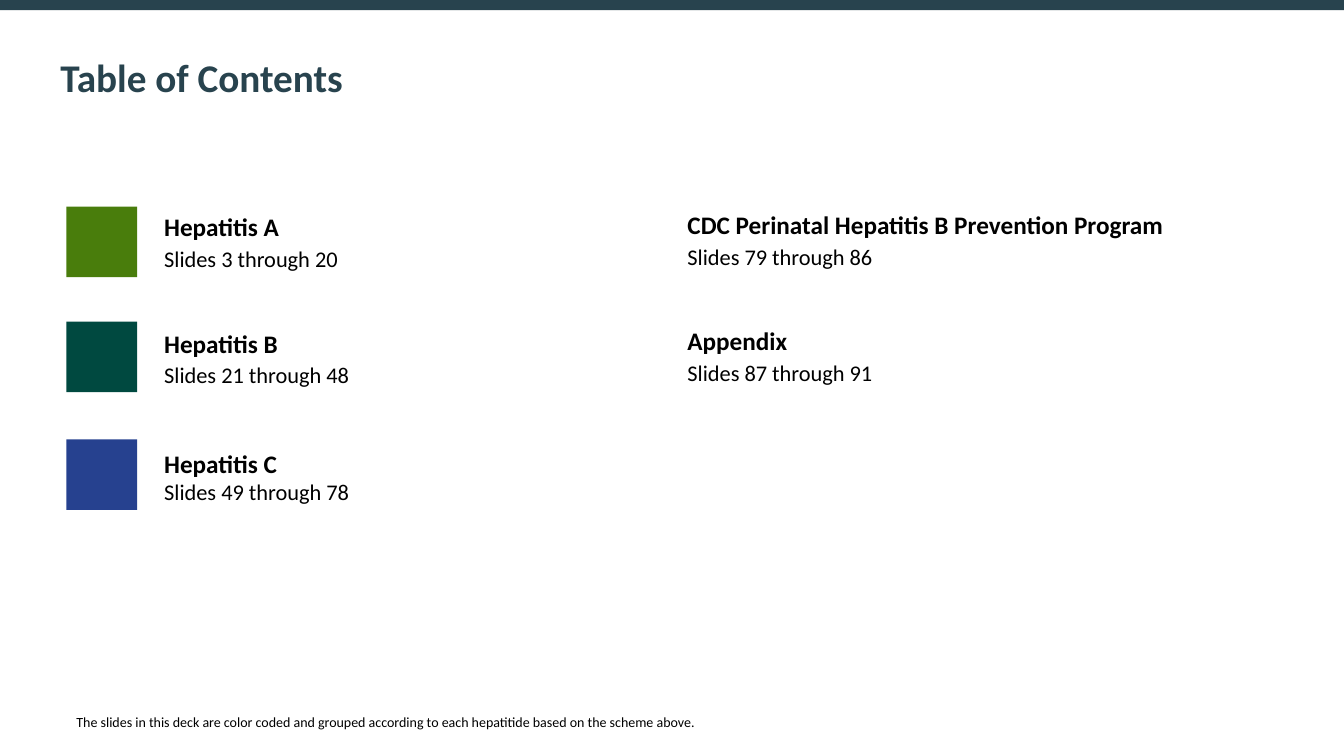
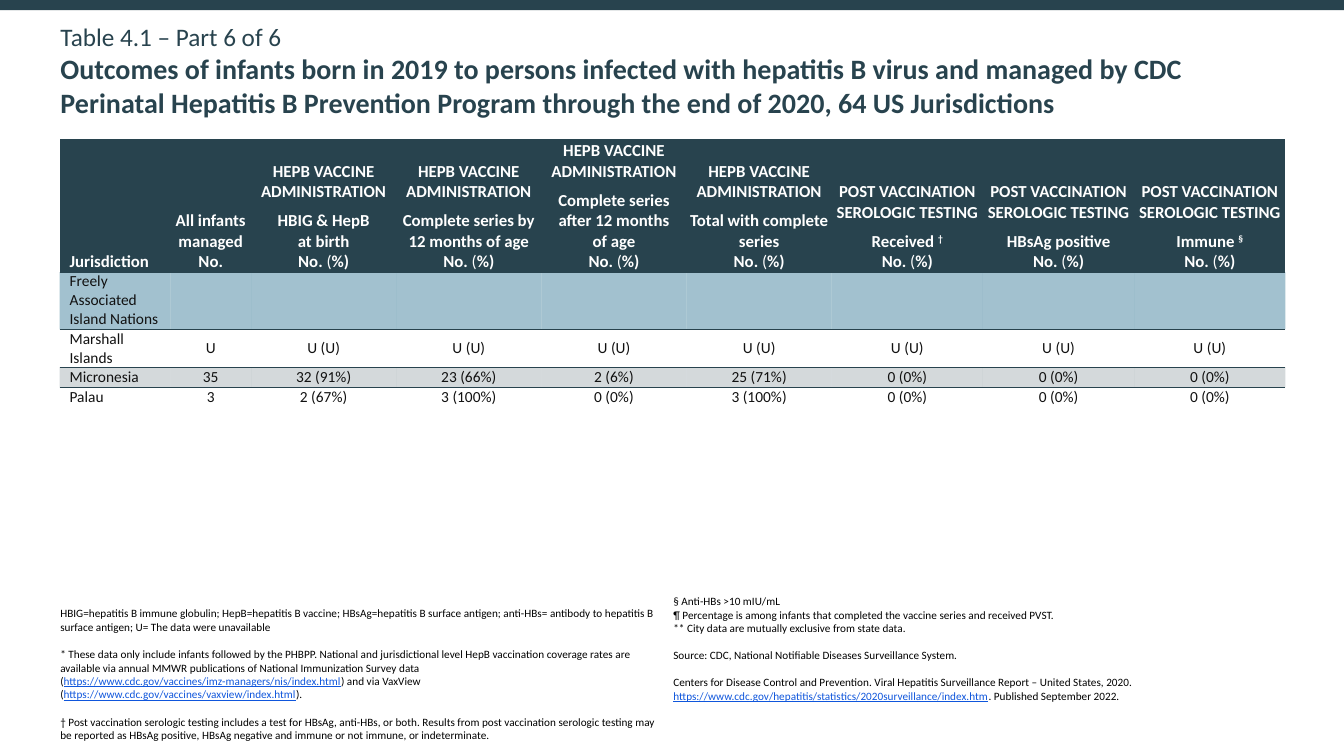
from dataclasses import dataclass
from lxml.etree import SubElement as Sub
from pptx import Presentation
from pptx.dml.color import RGBColor as Rgb
from pptx.enum.shapes import MSO_SHAPE as Form
from pptx.enum.text import MSO_ANCHOR as Anchor, MSO_AUTO_SIZE as Fit, PP_ALIGN as Align
from pptx.oxml.ns import qn
from pptx.util import Inches, Pt


@dataclass(frozen=True)
class Theme:
    font: str = "Calibri"
    # Colours
    navy: str = "28434E"
    steel: str = "6499AF"
    black: str = "000000"
    ink: str = "111111"
    white: str = "FFFFFF"
    link: str = "0F56DC"
    green: str = "497D0C"
    teal: str = "004940"
    blue: str = "26418F"
    # Type sizes
    title: int = 28
    lead: int = 18
    head: int = 20
    name: int = 18
    pages: int = 16
    hint: int = 10
    label: int = 12
    cell: int = 11
    note: int = 8


T = Theme()
BARE = "{2D5ABB26-0587-4C30-8999-92F81FD0307C}"  # table style without grid

# Contents: name, pages, left, name top, pages top
TOPICS = [
    ("Hepatitis A", "Slides 3 through 20", 1.53, 2.05, 2.38),
    ("Hepatitis B", "Slides 21 through 48", 1.53, 3.21, 3.53),
    ("Hepatitis C", "Slides 49 through 78", 1.53, 4.4, 4.69),
    ("CDC Perinatal Hepatitis B Prevention Program", "Slides 79 through 86", 6.72, 2.03, 2.36),
    ("Appendix", "Slides 87 through 91", 6.72, 3.18, 3.51),
]
KEYS = [(2.05, T.green), (3.19, T.teal), (4.36, T.blue)]
HINT = ("The slides in this deck are color coded and grouped according to "
        "each hepatitide based on the scheme above.")

# Outcomes table
WIDTHS = [1.1, 0.8] + [1.44] * 4 + [1.5] * 3
HEIGHTS = [1.32, 0.22, 0.22, 0.2, 0.2]
DOSE = "HEPB VACCINE ADMINISTRATION"
TEST = "POST VACCINATION SEROLOGIC TESTING"
HEADS = [  # group, measure, mark
    (DOSE, "HBIG & HepB\nat birth", ""),
    (DOSE, "Complete series by 12 months of age", ""),
    (DOSE, "Complete series after 12 months\nof age", ""),
    (DOSE, "Total with complete series", ""),
    (TEST, "Received ", "†"),
    (TEST, "HBsAg positive", ""),
    (TEST, "Immune ", "§"),
]
NONE = "0 (0%)"
ROWS = [
    ["Freely\nAssociated\nIsland Nations"] + [""] * 8,
    ["Marshall\nIslands", "U"] + ["U (U)"] * 7,
    ["Micronesia", "35", "32 (91%)", "23 (66%)", "2 (6%)", "25 (71%)"] + [NONE] * 3,
    ["Palau", "3", "2 (67%)", "3 (100%)", NONE, "3 (100%)"] + [NONE] * 3,
]
FILLS = [(T.navy, 100), (T.steel, 60), None, (T.navy, 20), None]

# Notes: space before, pieces of text (web addresses are styled as links)
LEFT = [
    (0, ["HBIG=hepatitis B immune globulin; HepB=hepatitis B vaccine; HBsAg=hepatitis B "
         "surface antigen; anti-HBs= antibody to hepatitis B surface antigen; "
         "U= The data were unavailable"]),
    (10, ["* These data only include infants followed by the PHBPP. National and "
          "jurisdictional level HepB vaccination coverage rates are available via annual "
          "MMWR publications of National Immunization Survey data (",
          "https://www.cdc.gov/vaccines/imz-managers/nis/index.html",
          ") and via VaxView (",
          "https://www.cdc.gov/vaccines/vaxview/index.html", ")."]),
    (10, ["† Post vaccination serologic testing includes a test for HBsAg, anti-HBs, or "
          "both. Results from post vaccination serologic testing may be reported as HBsAg "
          "positive, HBsAg negative and immune or not immune, or indeterminate."]),
]
RIGHT = [
    (0, ["§ Anti-HBs >10 mIU/mL"]),
    (0, ["¶ Percentage is among infants that completed the vaccine series and received PVST."]),
    (0, ["** City data are mutually exclusive from state data."]),
    (9.8, ["Source: CDC, National Notifiable Diseases Surveillance System."]),
    (9.8, ["Centers for Disease Control and Prevention. Viral Hepatitis Surveillance "
           "Report – United States, 2020. ",
           "https://www.cdc.gov/hepatitis/statistics/2020surveillance/index.htm",
           ". Published September 2022."]),
]


def style(font, size, color, bold=False):
    font.name, font.size, font.bold = T.font, Pt(size), bold
    font.color.rgb = Rgb.from_string(color)


def write(para, text, size, color=T.black, bold=False):
    """Add text to a paragraph; a newline becomes a line break."""
    for i, line in enumerate(text.split("\n")):
        if i:
            para.add_line_break()
        run = para.add_run()
        run.text = line
        style(run.font, size, color, bold)
    return run


def place(shape, x, y, w, h):
    shape.left, shape.top, shape.width, shape.height = map(Inches, (x, y, w, h))


def block(slide, x, y, w, h):
    frame = slide.shapes.add_textbox(*map(Inches, (x, y, w, h))).text_frame
    frame.word_wrap = True
    return frame


def rect(slide, x, y, w, h, color):
    shape = slide.shapes.add_shape(Form.RECTANGLE, *map(Inches, (x, y, w, h)))
    shape.shadow.inherit = False
    shape.fill.solid()
    shape.fill.fore_color.rgb = Rgb.from_string(color)
    shape.line.fill.background()
    return shape


def title(slide, box, parts):
    """Fill the title from (text, size, bold) parts."""
    shape = slide.shapes.title
    place(shape, *box)
    frame = shape.text_frame
    frame.word_wrap, frame.auto_size = True, Fit.NONE
    frame.vertical_anchor = Anchor.TOP
    para = frame.paragraphs[0]
    para.alignment = Align.LEFT
    for i, (text, size, bold) in enumerate(parts):
        if i:
            para.add_line_break()
        write(para, text, size, T.navy, bold)


def band(slide):
    """Put the top band on the layout, so that every slide shows it."""
    bar = rect(slide, 0, 0, 13.33, 0.1, T.navy)
    slide.slide_layout.shapes.element.insert(2, bar.element)


def topic(slide, name, pages, x, top, low):
    write(block(slide, x, top, 5.23, 0.4).paragraphs[0], name, T.name, bold=True)
    write(block(slide, x, low, 3.09, 0.37).paragraphs[0], pages, T.pages)


def edge(cell, side):
    line = Sub(cell._tc.get_or_add_tcPr(), qn("a:" + side), w=str(Pt(1)))
    Sub(Sub(line, qn("a:solidFill")), qn("a:srgbClr"), val=T.navy)
    cell._tc.tcPr.insert(0, line)


def paint(cell, fill):
    if not fill:
        cell.fill.background()
        return
    color, alpha = fill
    cell.fill.solid()
    cell.fill.fore_color.rgb = Rgb.from_string(color)
    if alpha < 100:
        tint = cell._tc.tcPr.find(".//" + qn("a:srgbClr"))
        Sub(tint, qn("a:alpha"), val=str(alpha * 1000))


def header(cell, group, name, mark):
    """Write a group, its measure and the unit in one heading cell."""
    frame = cell.text_frame
    top = frame.paragraphs[0]
    write(top, group, T.label, T.white, True)
    top.space_after = Pt(6)
    mid, unit = frame.add_paragraph(), frame.add_paragraph()
    write(mid, name, T.label, T.white, True)
    if mark:
        run = write(mid, mark, T.label, T.white, True)
        run._r.get_or_add_rPr().set("baseline", "30000")
    for text, bold in (("No.", True), (" (", False), ("%)", True)):
        write(unit, text, T.label, T.white, bold)


def grid(slide, x, y):
    size = len(HEIGHTS), len(WIDTHS)
    box = map(Inches, (x, y, sum(WIDTHS), sum(HEIGHTS)))
    table = slide.shapes.add_table(*size, *box).table
    table._tbl.tblPr.find(qn("a:tableStyleId")).text = BARE
    for col, width in zip(table.columns, WIDTHS):
        col.width = Inches(width)
    for row, height in zip(table.rows, HEIGHTS):
        row.height = Inches(height)
    # Text
    write(table.cell(0, 0).text_frame.paragraphs[0], "Jurisdiction", T.label, T.white, True)
    count = table.cell(0, 1).text_frame
    write(count.paragraphs[0], "All infants managed", T.label, T.white, True)
    write(count.add_paragraph(), "No.", T.label, T.white, True)
    for c, head in enumerate(HEADS, 2):
        header(table.cell(0, c), *head)
    for r, row in enumerate(ROWS, 1):
        for c, text in enumerate(row):
            para = table.cell(r, c).text_frame.paragraphs[0]
            if text:
                write(para, text, T.cell, T.ink)
            else:
                para.font.size = Pt(T.cell)
    # Fills, margins and rules
    last = len(ROWS)
    for r, row in enumerate(table.rows):
        for c, cell in enumerate(row.cells):
            paint(cell, FILLS[r])
            cell.vertical_anchor = Anchor.MIDDLE if r else Anchor.BOTTOM
            cell.margin_left = Inches(0.01 if c else 0.1)
            cell.margin_right = Inches(0.01)
            cell.margin_top = Inches(0 if r else 0.01)
            cell.margin_bottom = 0
            for para in cell.text_frame.paragraphs:
                para.alignment = Align.CENTER if c else Align.LEFT
            if r < last:
                edge(cell, "lnB")
            if r:
                edge(cell, "lnT")


def notes(slide, box, items):
    frame = block(slide, *box)
    for i, (gap, parts) in enumerate(items):
        para = frame.add_paragraph() if i else frame.paragraphs[0]
        if gap:
            para.space_before = Pt(gap)
        for text in parts:
            link = text.startswith("https")
            run = write(para, text, T.note, T.link if link else T.black)
            run.font.underline = link


def contents(slide):
    title(slide, (0.5, 0.48, 12.53, 0.68), [("Table of Contents", T.title, True)])
    for item in TOPICS:
        topic(slide, *item)
    for top, color in KEYS:
        rect(slide, 0.66, top, 0.7, 0.7, color)
    write(block(slide, 0.66, 7.03, 8.44, 0.27).paragraphs[0], HINT, T.hint)


def results(slide):
    title(slide, (0.5, 0.16, 12.25, 1), [
        ("Table 4.1 – Part 6 of 6", T.lead, False),
        ("Outcomes of infants born in 2019 to persons infected with hepatitis B virus and "
         "managed by CDC Perinatal Hepatitis B Prevention Program through the end of 2020, "
         "64 US Jurisdictions", T.head, True)])
    grid(slide, 0.59, 1.38)
    notes(slide, (0.5, 5.97, 6.17, 0.74), LEFT)
    notes(slide, (6.58, 5.85, 4.92, 1.45), RIGHT)


def main():
    deck = Presentation()
    deck.slide_width, deck.slide_height = Inches(13.33), Inches(7.5)
    layout = deck.slide_layouts[5]  # title only
    first, second = (deck.slides.add_slide(layout) for _ in range(2))
    band(first)
    contents(first)
    results(second)
    deck.save("out.pptx")


if __name__ == "__main__":
    main()
